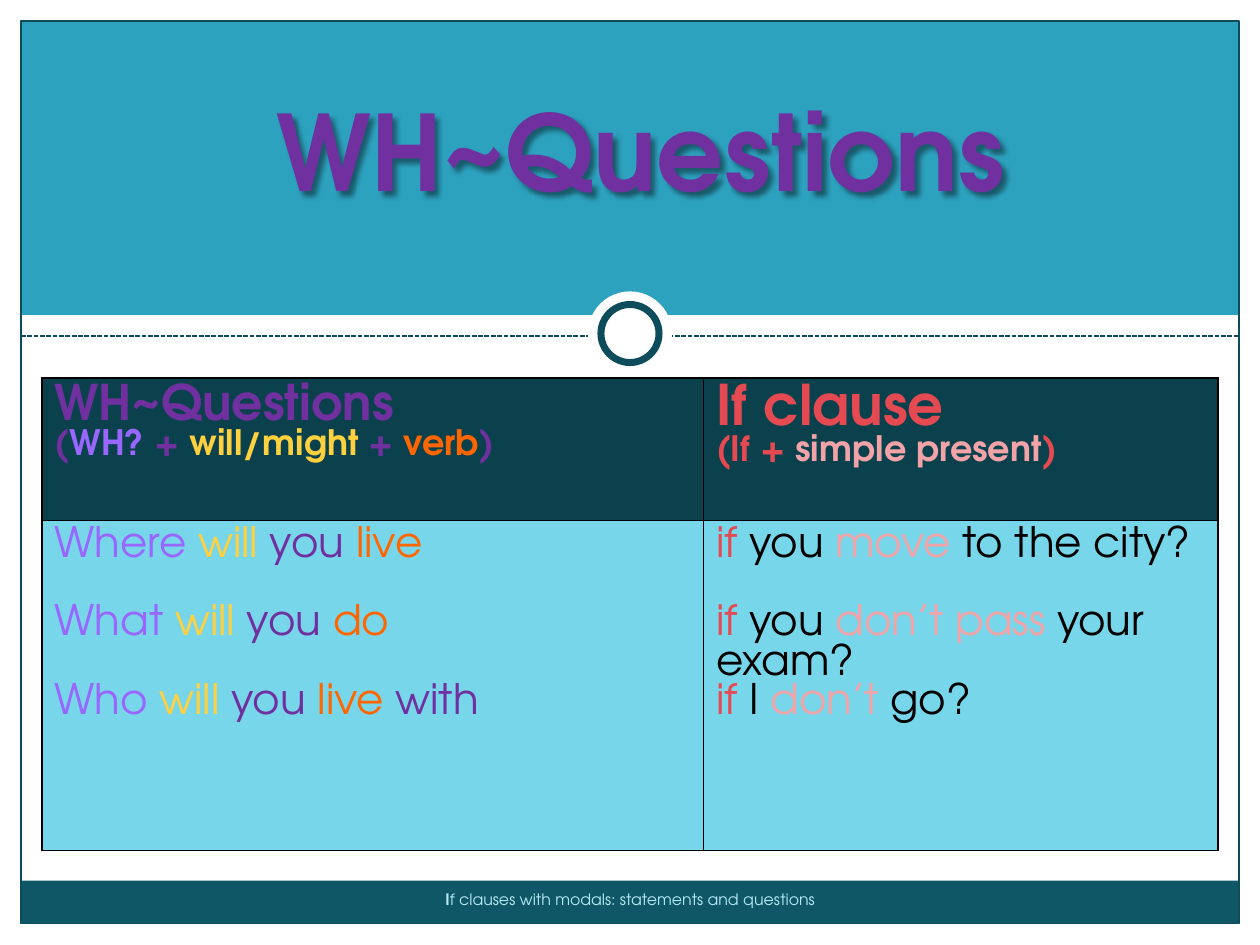
"""Build a grammar slide on WH-questions with if clauses."""
from lxml.etree import SubElement
from pptx import Presentation
from pptx.dml.color import RGBColor
from pptx.enum.dml import MSO_LINE
from pptx.enum.shapes import MSO_CONNECTOR, MSO_SHAPE as Shape
from pptx.enum.text import MSO_ANCHOR, MSO_AUTO_SIZE, PP_ALIGN
from pptx.oxml import parse_xml
from pptx.oxml.ns import nsdecls, qn
from pptx.util import Pt

FONT = "TeX Gyre Adventor"
COLORS = {
    "white": "FFFFFF", "banner": "2DA2BF", "footer": "0F5666", "frame": "0D4C5A",
    "header": "0B414C", "body": "78D6EA", "black": "000000", "pale": "B5E9F4",
    "subject": "7030A0", "question": "9966FF", "modal": "FFD13F", "verb": "FF6600",
    "if": "E54A52", "present": "F2A3A7",
}
HEADERS = [
    (28, [("WH~Questions", "subject")],
     [("(", "subject"), ("WH? ", "question"), ("+ ", "subject"), ("will/might ", "modal"),
      ("+ ", "subject"), ("verb", "verb"), (")", "subject")]),
    (32, [("If clause", "if")],
     [("(If + ", "if"), ("simple present", "present"), (")", "if")]),
]
QUESTIONS = [("Where", "live", ""), ("What", "do", ""), ("Who", "live ", "with")]
CLAUSES = [(" you ", "move", " to the city?"), (" you ", "don’t pass ", "your exam?"),
           (" I ", "don’t ", "go?")]
BLANK_LINE = 22.3


def color(name):
    return RGBColor.from_string(COLORS[name])


def add_panel(page, kind, left, top, width, height, fill=None, line=None, weight=0.75):
    panel = page.shapes.add_shape(kind, Pt(left), Pt(top), Pt(width), Pt(height))
    panel.shadow.inherit = False
    if fill:
        panel.fill.solid()
        panel.fill.fore_color.rgb = color(fill)
    else:
        panel.fill.background()
    if line:
        panel.line.color.rgb = color(line)
        panel.line.width = Pt(weight)
    else:
        panel.line.fill.background()


def add_divider(page, left, right, top):
    divider = page.shapes.add_connector(
        MSO_CONNECTOR.STRAIGHT, Pt(left), Pt(top), Pt(right), Pt(top))
    divider.line.color.rgb = color("frame")
    divider.line.width = Pt(0.9)
    divider.line.dash_style = MSO_LINE.SQUARE_DOT
    SubElement(divider._element.spPr, qn("a:effectLst"))


def write_spans(para, spans, size, bold=False):
    para.font.name, para.font.size, para.font.bold = FONT, Pt(size), bold
    for text, tint in spans:
        span = para.add_run()
        span.text = text
        span.font.color.rgb = color(tint)


def fill_title(page):
    title = page.shapes.title
    title.left, title.top, title.width, title.height = Pt(24), Pt(46), Pt(684), Pt(104.4)
    title.fill.background()
    frame = title.text_frame
    frame.auto_size = MSO_AUTO_SIZE.NONE
    frame.vertical_anchor = MSO_ANCHOR.TOP
    para = frame.paragraphs[0]
    para.alignment = PP_ALIGN.CENTER
    write_spans(para, [("WH~Questions", "subject")], 60, bold=True)
    title.element.spPr.append(parse_xml(
        f'<a:effectLst {nsdecls("a")}><a:outerShdw blurRad="38100" dist="38100" dir="2700000">'
        f'<a:srgbClr val="{COLORS["black"]}"><a:alpha val="43000"/></a:srgbClr>'
        '</a:outerShdw></a:effectLst>'))
    title.element.getparent().append(title.element)


def add_footer(page):
    box = page.shapes.add_textbox(Pt(138), Pt(504.7), Pt(444), Pt(23))
    box.text_frame.word_wrap = False
    para = box.text_frame.paragraphs[0]
    para.alignment = PP_ALIGN.CENTER
    write_spans(para, [("I", "pale"),
                       ("f clauses with modals: statements and questions", "pale")], 9)
    para.runs[0].font.bold = True


def add_borders(cell):
    properties = cell._tc.get_or_add_tcPr()
    for index, side in enumerate(("lnL", "lnR", "lnT", "lnB")):
        properties.insert(index, parse_xml(
            f'<a:{side} {nsdecls("a")} w="12700"><a:solidFill>'
            f'<a:srgbClr val="{COLORS["black"]}"/></a:solidFill></a:{side}>'))


def fill_cell(cell, fill, lines, bold=False):
    cell.fill.solid()
    cell.fill.fore_color.rgb = color(fill)
    add_borders(cell)
    frame = cell.text_frame
    for index, (spans, size, gap) in enumerate(lines):
        para = frame.add_paragraph() if index else frame.paragraphs[0]
        para.space_before = Pt(gap)
        write_spans(para, spans, size, bold)


def add_grammar_table(page):
    table = page.shapes.add_table(2, 2, Pt(24), Pt(216), Pt(672), Pt(270)).table
    for column, width in zip(table.columns, (378, 294)):
        column.width = Pt(width)
    for row, height in zip(table.rows, (81.4, 188.6)):
        row.height = Pt(height)
    for column, (size, heading, pattern) in enumerate(HEADERS):
        fill_cell(table.cell(0, column), "header",
                  [(heading, size, 0), (pattern, 20, 0)], bold=True)
    questions = [[(word, "question"), (" will ", "modal"), ("you ", "subject"), (verb, "verb")]
                 + ([(ending, "subject")] if ending else [])
                 for word, verb, ending in QUESTIONS]
    clauses = [[("if", "if"), (subject, "black"), (verb, "present"), (ending, "black")]
               for subject, verb, ending in CLAUSES]
    columns = [(questions, (0, BLANK_LINE, BLANK_LINE)), (clauses, (0, BLANK_LINE, 0))]
    for column, (sentences, gaps) in enumerate(columns):
        fill_cell(table.cell(1, column), "body",
                  [(spans, 24, gap) for spans, gap in zip(sentences, gaps)])


def main():
    deck = Presentation()
    deck.slide_width, deck.slide_height = Pt(720), Pt(540)
    page = deck.slides.add_slide(deck.slide_layouts[5])
    for margin in ((0, 528, 720, 12), (0, 0, 720, 12), (708, 0, 12, 540), (12, 180, 696, 24)):
        add_panel(page, Shape.RECTANGLE, *margin, "white")
    add_panel(page, Shape.RECTANGLE, 12, 11.5, 696, 168.5, "banner")
    add_panel(page, Shape.RECTANGLE, 12, 503.3, 696, 24.5, "footer")
    add_panel(page, Shape.RECTANGLE, 12, 12, 696, 515.8, line="frame")
    add_divider(page, 12, 708, 192)
    add_panel(page, Shape.OVAL, 336, 166.5, 48, 48, "white")
    add_panel(page, Shape.OVAL, 343.4, 174, 33.2, 33.2, "white", "frame", 4)
    fill_title(page)
    add_footer(page)
    add_grammar_table(page)
    deck.save("out.pptx")


if __name__ == "__main__":
    main()
